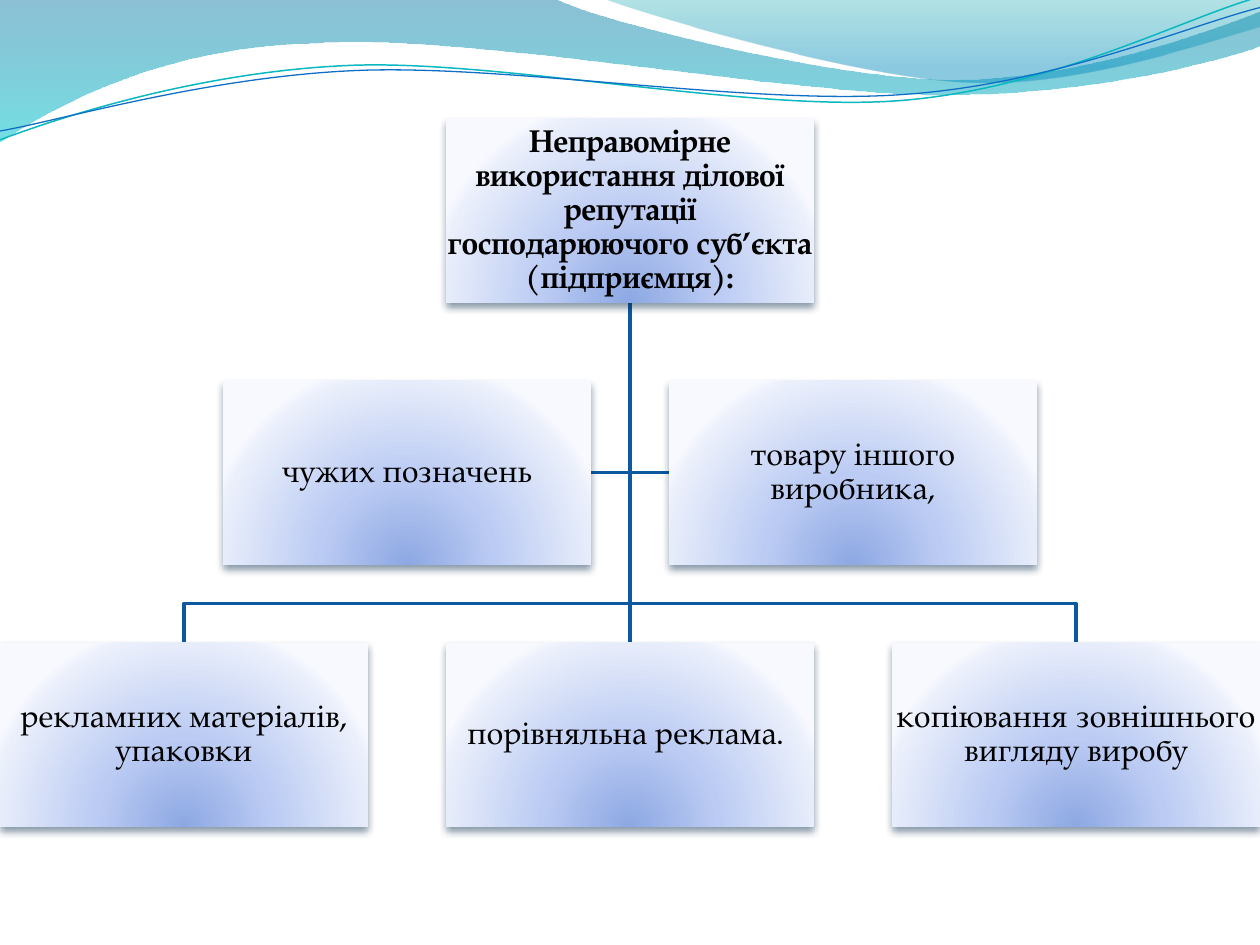
from lxml import etree
from pptx import Presentation
from pptx.dml.color import RGBColor
from pptx.enum.shapes import MSO_CONNECTOR, MSO_SHAPE
from pptx.enum.text import MSO_ANCHOR, PP_ALIGN
from pptx.oxml.ns import qn
from pptx.util import Inches, Pt

RECT = MSO_SHAPE.RECTANGLE
STRAIGHT = MSO_CONNECTOR.STRAIGHT
CENTER, MIDDLE = PP_ALIGN.CENTER, MSO_ANCHOR.MIDDLE

BLACK = RGBColor(0x00, 0x00, 0x00)
LINK = RGBColor(0x0C, 0x59, 0x9F)
TEAL_LINE = RGBColor(0x0A, 0xB8, 0xBF)
BLUE_LINE = RGBColor(0x0F, 0x6F, 0xC6)
SHADOW = RGBColor(0x04, 0x27, 0x47)
FONT = "TeX Gyre Pagella"

# Gradient stops: position %, colour, opacity %
WAVE_STOPS = [(0, RGBColor(0x00, 0x74, 0xA1), 45), (100, RGBColor(0x00, 0xC6, 0xCF), 55)]
CREST_STOPS = [(0, RGBColor(0x00, 0xA1, 0xA9), 30), (80, RGBColor(0x00, 0x8B, 0xBF), 45)]
BOX_STOPS = [(0, RGBColor(0x8D, 0xA8, 0xE3), 100), (43, RGBColor(0xBB, 0xCB, 0xF3), 100),
             (93, RGBColor(0xEA, 0xEF, 0xFB), 100), (100, RGBColor(0xF7, 0xF9, 0xFF), 100)]

# Outlines in tenths of the slide's width: a pair is a straight step, six numbers a Bezier curve
WAVE = [(0, 0), (4.4, -0.01), (4.76, 0.17, 6.64, 0.63, 7.58, 0.63),
        (8.53, 0.63, 9.58, 0.26, 10, 0.09), (10.01, 0.36),
        (9.83, 0.44, 8.7, 0.76, 7.46, 0.75), (6.22, 0.75, 3.82, 0.28, 2.57, 0.34),
        (1.29, 0.36, 0.46, 0.83, -0.01, 1.13)]
CREST = [(4.79, -0.01), (5.09, 0.11, 6.82, 0.62, 7.69, 0.65),
         (8.56, 0.69, 9.61, 0.32, 10, 0.21), (10, 0)]
TEAL_CURVE = [(0, 1.11), (0.48, 0.93, 1.58, 0.57, 2.77, 0.52),
              (3.95, 0.47, 5.93, 0.89, 7.13, 0.8), (8.33, 0.71, 9.38, 0.15, 9.98, -0.02)]
BLUE_CURVE = [(0, 1.04), (0.47, 0.96, 1.64, 0.61, 2.83, 0.56),
              (4.03, 0.51, 5.97, 0.84, 7.17, 0.75), (8.36, 0.67, 9.41, 0.21, 10, 0.06)]

# Chart grid: half columns and rows
LEFT, TOP = 0, Inches(0.94)
HALF_COL, ROW = Inches(1.77), Inches(2.08)
BOX_W, BOX_H = Inches(2.92), Inches(1.46)
ROOT = (2, 0, "Неправомірне використання ділової репутації господарюючого суб’єкта (підприємця):")
SIDE = [(1, 1, "чужих позначень"), (3, 1, "товару іншого виробника,")]
BOTTOM = [(0, 2, "рекламних матеріалів, упаковки"), (2, 2, "порівняльна реклама. "),
          (4, 2, "копіювання зовнішнього вигляду виробу")]


def sub(parent, tag, **attrs):
    el = etree.SubElement(parent, qn(tag))
    for name, value in attrs.items():
        el.set(name, str(value))
    return el


def add_color(parent, color, opacity):
    sub(sub(parent, "a:srgbClr", val=color), "a:alpha", val=opacity * 1000)


def set_gradient(shape, stops, radial=False):
    shape.fill.gradient()
    grad = shape._element.spPr.find(qn("a:gradFill"))
    for child in list(grad):
        grad.remove(child)
    gs_list = sub(grad, "a:gsLst")
    for pos, color, opacity in stops:
        add_color(sub(gs_list, "a:gs", pos=pos * 1000), color, opacity)
    if radial:
        circle = sub(grad, "a:path", path="circle")
        sub(circle, "a:fillToRect", l=50000, t=130000, r=50000, b=-30000)
    else:
        sub(grad, "a:lin", ang=5400000, scaled=1)


def add_outline(s, steps, close=False):
    """Add a freeform through the steps' end points, then bend its curved steps."""
    ends = [step[-2:] for step in steps]
    builder = s.shapes.build_freeform(*ends[0])
    builder.add_line_segments(ends[1:], close=close)
    shape = builder.convert_to_shape()
    shape.shadow.inherit = False
    lines = list(shape._element.iter(qn("a:lnTo")))
    for line, step in zip(lines, steps[1:]):
        if len(step) == 6:
            curve = etree.Element(qn("a:cubicBezTo"))
            for x, y in zip(step[::2], step[1::2]):
                sub(curve, "a:pt", x=x - shape.left, y=y - shape.top)
            line.getparent().replace(line, curve)
    return shape


def add_open_line(s, steps, color, width):
    shape = add_outline(s, steps)
    shape.fill.background()
    shape.line.color.rgb = color
    shape.line.width = Pt(width)


def add_waves(s, unit):
    def scaled(steps):
        return [tuple(round(value * unit) for value in step) for step in steps]

    for steps, stops in ((WAVE, WAVE_STOPS), (CREST, CREST_STOPS)):
        shape = add_outline(s, scaled(steps), close=True)
        set_gradient(shape, stops)
        shape.line.fill.background()
    add_open_line(s, scaled(TEAL_CURVE), TEAL_LINE, 0.85)
    add_open_line(s, scaled(BLUE_CURVE), BLUE_LINE, 0.75)


def box_origin(half_col, row):
    return LEFT + half_col * HALF_COL, TOP + row * ROW


def add_box(s, half_col, row, text, bold=False):
    box = s.shapes.add_shape(RECT, *box_origin(half_col, row), BOX_W, BOX_H)
    set_gradient(box, BOX_STOPS, radial=True)
    box.line.fill.background()
    box.shadow.inherit = False
    effects = box._element.spPr.find(qn("a:effectLst"))
    shadow = sub(effects, "a:outerShdw", blurRad=Pt(4.5), dist=Pt(3), dir=5400000, rotWithShape=0)
    add_color(shadow, SHADOW, 48)
    tf = box.text_frame
    tf.word_wrap = True
    tf.vertical_anchor = MIDDLE
    tf.margin_left = tf.margin_right = tf.margin_top = tf.margin_bottom = Inches(0.01)
    tf.text = text
    p = tf.paragraphs[0]
    p.alignment = CENTER
    p.line_spacing = 0.9
    font = p.runs[0].font
    font.name, font.size, font.bold = FONT, Pt(18), bold
    font.color.rgb = BLACK
    return box


def add_links(s):
    """Draw the bent links behind the boxes and return the straight middle one."""
    left, top = box_origin(*ROOT[:2])
    x, y = left + BOX_W // 2, top + BOX_H
    for half_col, row, _ in reversed(SIDE):
        left, top = box_origin(half_col, row)
        edge = left if left > x else left + BOX_W
        mid = top + BOX_H // 2
        add_open_line(s, [(x, y), (x, mid), (edge, mid)], LINK, 2)
    for half_col, row, _ in reversed(BOTTOM):
        left, top = box_origin(half_col, row)
        center = left + BOX_W // 2
        if center == x:
            trunk = s.shapes.add_connector(STRAIGHT, x, y, x, top)
            trunk.line.color.rgb = LINK
            trunk.line.width = Pt(2)
            sub(trunk._element.spPr, "a:effectLst")
        else:
            bend = top - (ROW - BOX_H) // 2
            add_open_line(s, [(x, y), (x, bend), (center, bend), (center, top)], LINK, 2)
    return trunk


def add_hierarchy(s):
    trunk = add_links(s)
    root = add_box(s, *ROOT, bold=True)
    bottoms = [add_box(s, *item) for item in BOTTOM]
    for item in SIDE:
        add_box(s, *item)
    trunk.begin_connect(root, 2)
    trunk.end_connect(bottoms[1], 0)


def main():
    prs = Presentation()
    prs.slide_width, prs.slide_height = Inches(10), Inches(7.5)
    s = prs.slides.add_slide(prs.slide_layouts[6])
    add_waves(s, prs.slide_width / 10)
    add_hierarchy(s)
    prs.save("out.pptx")


if __name__ == "__main__":
    main()
